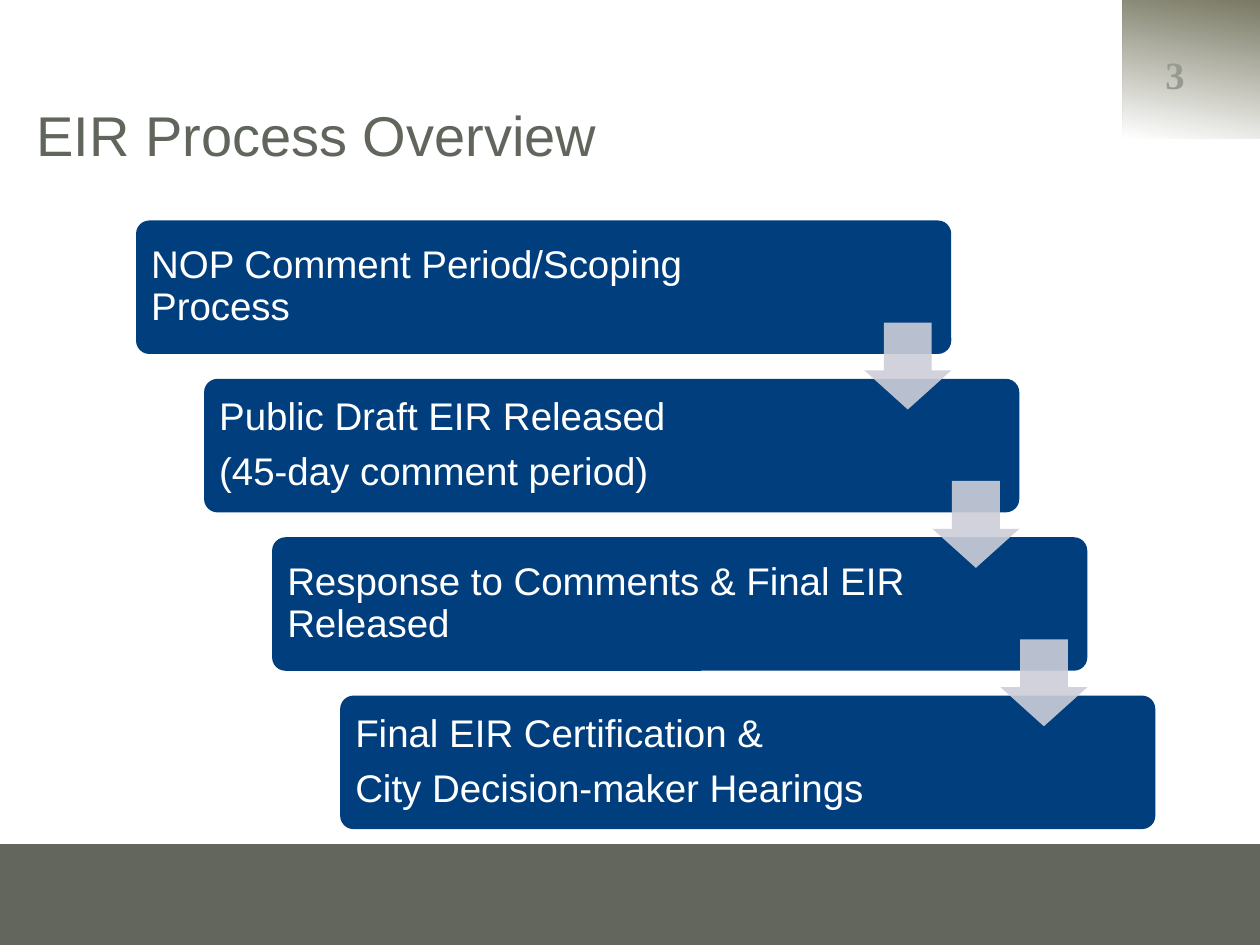
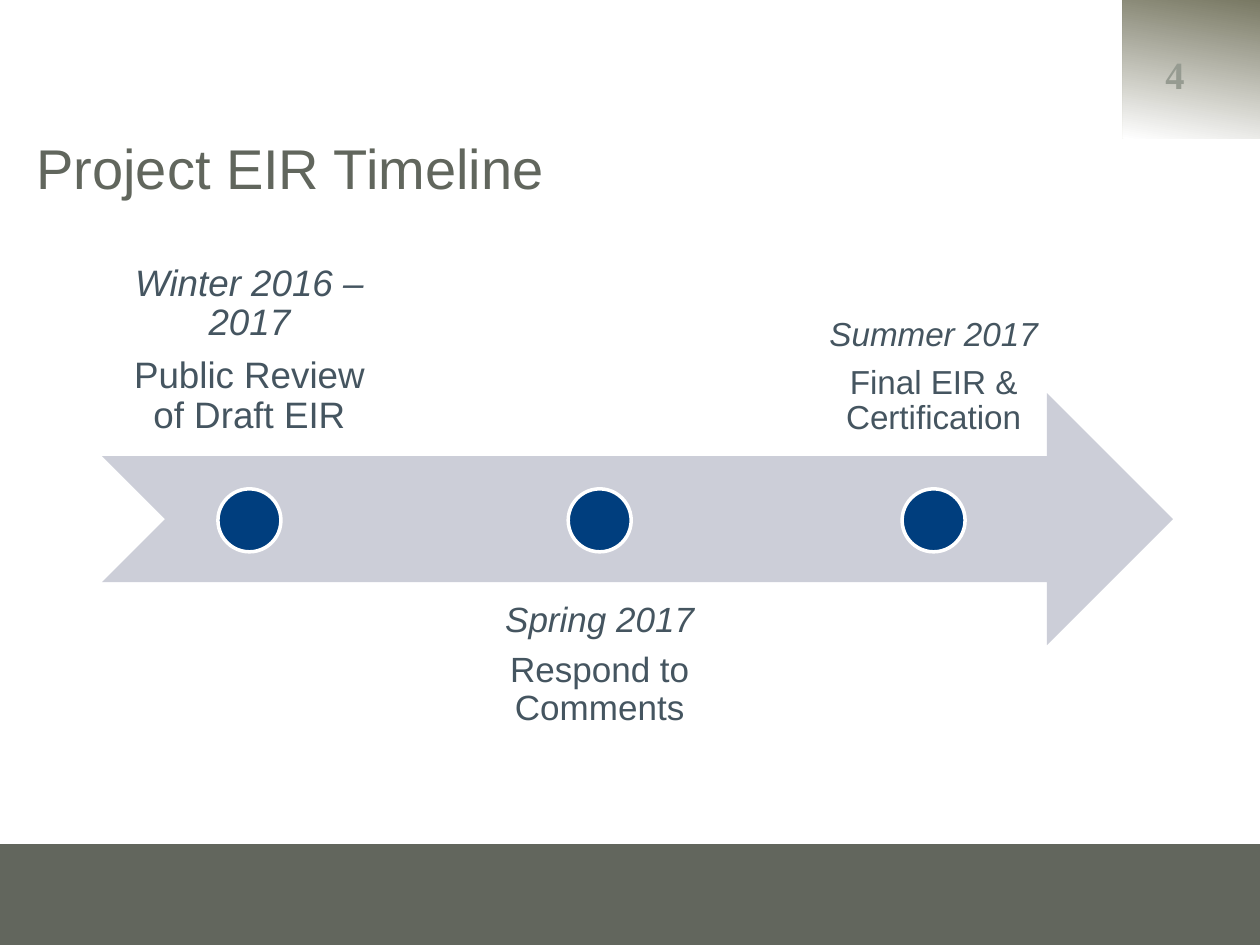
from dataclasses import dataclass

from lxml import etree
from pptx import Presentation
from pptx import util as u
from pptx.dml.color import RGBColor
from pptx.enum import shapes, text
from pptx.oxml import ns


@dataclass(frozen=True)
class Theme:
    band: str = "62665D"
    corner: str = "787863"
    title: str = "61665D"
    number: str = "969B91"
    accent: str = "003E7E"
    arrow: str = "CCCED8"
    label: str = "455560"
    white: str = "FFFFFF"
    face: str = "Arial"
    number_face: str = "Times New Roman"
    title_size: int = 32
    step_size: int = 22
    number_size: int = 22
    line_spacing: float = 0.9
    paragraph_gap: float = 0.35


theme = Theme()
COLUMNS, ROWS = 100, 75
TOP, MIDDLE, BOTTOM = text.MSO_ANCHOR.TOP, text.MSO_ANCHOR.MIDDLE, text.MSO_ANCHOR.BOTTOM
LEFT, CENTER, RIGHT = text.PP_ALIGN.LEFT, text.PP_ALIGN.CENTER, text.PP_ALIGN.RIGHT
GEOMETRY = shapes.MSO_SHAPE

deck = Presentation()
deck.slide_width, deck.slide_height = u.Inches(10), u.Inches(7.5)
column, row = deck.slide_width / COLUMNS, deck.slide_height / ROWS


def draw(slide, geometry, left, top, width, height, fill=None):
    """Add a borderless shape placed in grid columns and rows."""
    shape = slide.shapes.add_shape(geometry, int(left * column), int(top * row),
                                   int(width * column), int(height * row))
    shape.shadow.inherit = False
    shape.line.fill.background()
    if fill:
        shape.fill.solid()
        shape.fill.fore_color.rgb = RGBColor.from_string(fill)
    else:
        shape.fill.background()
    return shape


def write(shape, lines, size, color, align=LEFT, anchor=MIDDLE, inset=None,
          face=theme.face, bold=False, first_italic=False):
    """Fill a shape with one paragraph per line; an inset (in columns) marks diagram text."""
    frame = shape.text_frame
    frame.word_wrap = True
    frame.vertical_anchor = anchor
    if inset is not None:
        frame.margin_left = frame.margin_right = int(inset * column)
        frame.margin_top = frame.margin_bottom = int(inset * row)
    for index, line in enumerate(lines):
        paragraph = frame.add_paragraph() if index else frame.paragraphs[0]
        paragraph.alignment = align
        if inset is not None:
            paragraph.line_spacing = theme.line_spacing
            paragraph.space_after = u.Pt(size * theme.paragraph_gap)
        run = paragraph.add_run()
        run.text = line
        run.font.name, run.font.size = face, u.Pt(size)
        run.font.bold, run.font.italic = bold, first_italic and index == 0
        run.font.color.rgb = RGBColor.from_string(color)


# Shared band, corner, page number and title
pages = []
for number, heading, heading_top in [("3", "EIR Process Overview", 1.3),
                                     ("4", "Project EIR Timeline", 3.9)]:
    page = deck.slides.add_slide(deck.slide_layouts[6])
    draw(page, GEOMETRY.RECTANGLE, 0, 67, COLUMNS, 8, theme.band)
    corner = draw(page, GEOMETRY.RECTANGLE, 89.1, 0, 10.9, 11)
    corner.fill.gradient()
    corner.fill.gradient_angle = 260
    for stop, position, color in zip(corner.fill.gradient_stops, (0, 1),
                                     (theme.corner, theme.white)):
        stop.position = position
        stop.color.rgb = RGBColor.from_string(color)
    write(draw(page, GEOMETRY.OVAL, 90.3, 3.9, 5.5, 4), [number], theme.number_size,
          theme.number, RIGHT, face=theme.number_face, bold=True)
    title = page.shapes.add_textbox(int(1.9 * column), int(heading_top * row),
                                    int(71.2 * column), int(12.5 * row))
    write(title, [heading], theme.title_size, theme.title, anchor=BOTTOM)
    pages.append(page)
process, timeline = pages

# Process: a staircase of steps joined by down arrows
steps = [
    ["NOP Comment Period/Scoping Process"],
    ["Public Draft EIR Released", "(45-day comment period)"],
    ["Response to Comments & Final EIR Released"],
    ["Final EIR Certification &", "City Decision-maker Hearings"],
]
STEP_WIDTH, STEP_HEIGHT, ARROW_SIDE = 64.7, 10.6, 6.9
corners = [(10.8 + 5.4 * i, 17.5 + 12.57 * i) for i in range(len(steps))]
for lines, (left, top) in zip(steps, corners):
    step = draw(process, GEOMETRY.ROUNDED_RECTANGLE, left, top, STEP_WIDTH, STEP_HEIGHT,
                theme.accent)
    step.adjustments[0] = 0.1
    wording = draw(process, GEOMETRY.RECTANGLE, left + 0.3, top + 0.3, 52, 10)
    write(wording, lines, theme.step_size, theme.white, inset=0.9)

for left, top in corners[:-1]:
    arrow = draw(process, GEOMETRY.DOWN_ARROW, left + STEP_WIDTH - ARROW_SIDE, top + 8.1,
                 ARROW_SIDE, ARROW_SIDE, theme.arrow)
    arrow.adjustments[0], arrow.adjustments[1] = 0.55, 0.45
    tint = arrow.fill._xPr.find(".//" + ns.qn("a:srgbClr"))
    etree.SubElement(tint, ns.qn("a:alpha")).set("val", "90000")

# Timeline: milestones along a notched arrow, labels above and below
draw(timeline, GEOMETRY.NOTCHED_RIGHT_ARROW, 8.1, 31.2, 85, 20, theme.arrow)
DOT = 5
milestones = [
    (19.8, 23.4, 16.2, BOTTOM, 21, 1.6, ["Winter 2016 – 2017", "Public Review of Draft EIR"]),
    (47.6, 30.6, 46.2, TOP, 20, 1.6, ["Spring 2017", "Respond to Comments"]),
    (74.1, 20.8, 16.2, BOTTOM, 19, 1.5, ["Summer 2017", "Final EIR & Certification"]),
]
for center, width, top, anchor, size, inset, lines in milestones:
    label = draw(timeline, GEOMETRY.RECTANGLE, center - width / 2, top, width, 20)
    write(label, lines, size, theme.label, CENTER, anchor, inset, first_italic=True)
    dot = draw(timeline, GEOMETRY.OVAL, center - DOT / 2, 38.8, DOT, DOT, theme.accent)
    dot.line.color.rgb = RGBColor.from_string(theme.white)
    dot.line.width = u.Pt(2)

deck.save("out.pptx")
